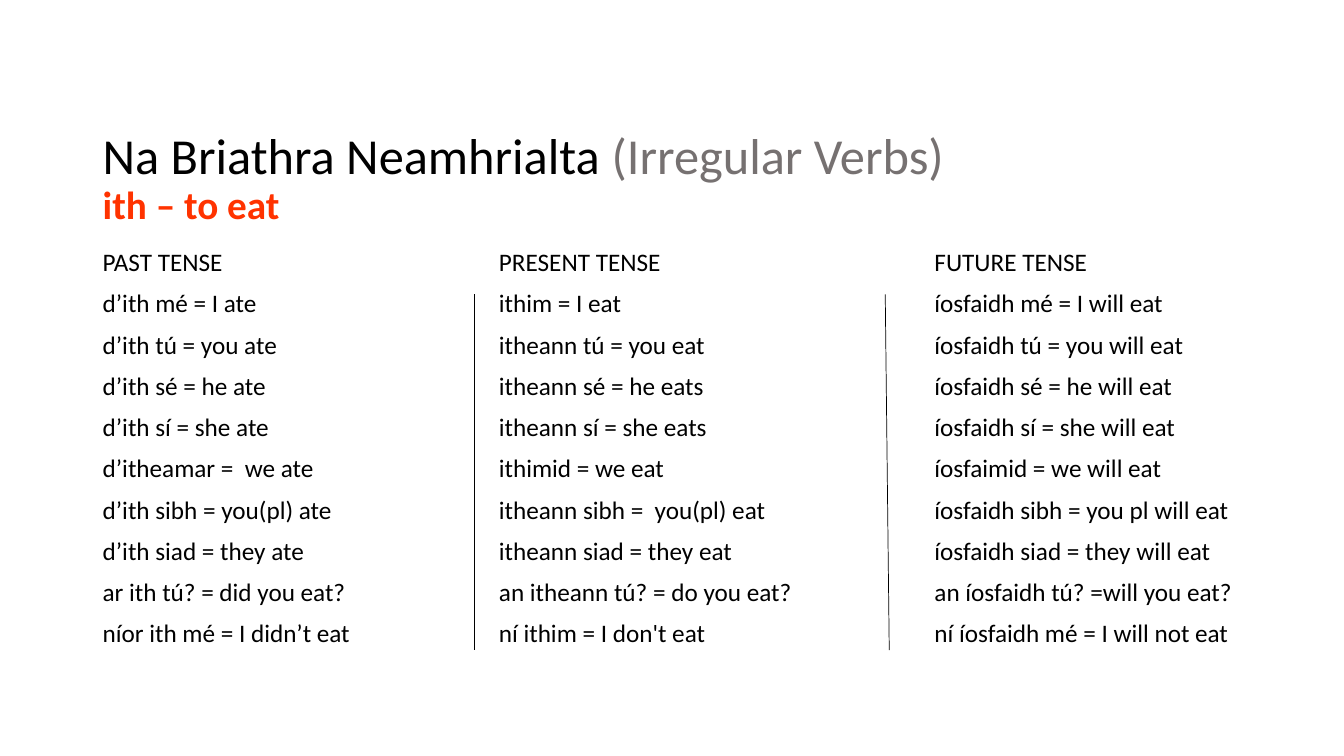
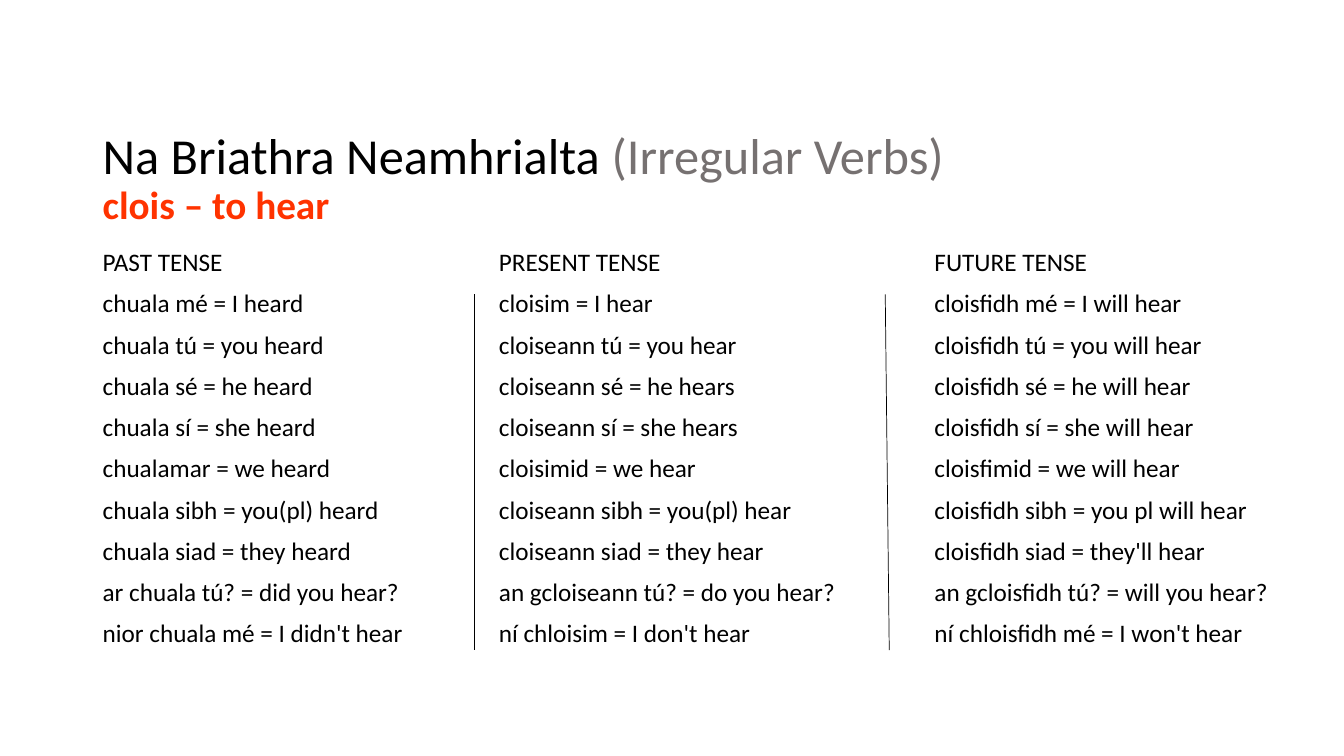
from lxml import etree
from pptx import Presentation
from pptx.dml.color import RGBColor
from pptx.enum.shapes import MSO_CONNECTOR as Conn
from pptx.enum.text import MSO_ANCHOR as Anchor
from pptx.oxml.ns import qn
from pptx.util import Inches, Pt

BLACK = RGBColor(0x00, 0x00, 0x00)
GREY = RGBColor(0x76, 0x71, 0x71)
RED = RGBColor(0xFF, 0x33, 0x00)

COLUMNS = [
    ("PAST TENSE", 0.92, 3.57),
    ("PRESENT TENSE", 4.85, 4.11),
    ("FUTURE TENSE", 9.17, 3.57),
]
DIVIDERS = [(4.7, 4.7), (8.78, 8.82)]

VERBS = {
    "ith – to eat": [
        [
            "d’ith mé = I ate",
            "d’ith tú = you ate",
            "d’ith sé = he ate",
            "d’ith sí = she ate",
            "d’itheamar =  we ate",
            "d’ith sibh = you(pl) ate",
            "d’ith siad = they ate",
            "ar ith tú? = did you eat?",
            "níor ith mé = I didn’t eat",
        ],
        [
            "ithim = I eat",
            "itheann tú = you eat",
            "itheann sé = he eats",
            "itheann sí = she eats",
            "ithimid = we eat",
            "itheann sibh =  you(pl) eat",
            "itheann siad = they eat",
            "an itheann tú? = do you eat?",
            "ní ithim = I don't eat",
        ],
        [
            "íosfaidh mé = I will eat",
            "íosfaidh tú = you will eat",
            "íosfaidh sé = he will eat",
            "íosfaidh sí = she will eat",
            "íosfaimid = we will eat",
            "íosfaidh sibh = you pl will eat",
            "íosfaidh siad = they will eat",
            "an íosfaidh tú? =will you eat?",
            "ní íosfaidh mé = I will not eat",
        ],
    ],
    "clois – to hear": [
        [
            "chuala mé = I heard",
            "chuala tú = you heard",
            "chuala sé = he heard",
            "chuala sí = she heard",
            "chualamar = we heard",
            "chuala sibh = you(pl) heard",
            "chuala siad = they heard",
            "ar chuala tú? = did you hear?",
            "nior chuala mé = I didn't hear",
        ],
        [
            "cloisim = I hear",
            "cloiseann tú = you hear",
            "cloiseann sé = he hears",
            "cloiseann sí = she hears",
            "cloisimid = we hear",
            "cloiseann sibh = you(pl) hear",
            "cloiseann siad = they hear",
            "an gcloiseann tú? = do you hear?",
            "ní chloisim = I don't hear",
        ],
        [
            "cloisfidh mé = I will hear",
            "cloisfidh tú = you will hear",
            "cloisfidh sé = he will hear",
            "cloisfidh sí = she will hear",
            "cloisfimid = we will hear",
            "cloisfidh sibh = you pl will hear",
            "cloisfidh siad = they'll hear",
            "an gcloisfidh tú? = will you hear?",
            "ní chloisfidh mé = I won't hear",
        ],
    ],
}


class Deck:
    font = "Calibri"
    line_spacing = 0.9

    def __init__(self):
        self.prs = Presentation()
        self.prs.slide_width = Inches(13.33)
        self.prs.slide_height = Inches(7.5)
        self.slide = None

    def new_slide(self):
        self.slide = self.prs.slides.add_slide(self.prs.slide_layouts[6])

    def text_frame(self, left, top, width, height):
        box = self.slide.shapes.add_textbox(
            Inches(left), Inches(top), Inches(width), Inches(height))
        tf = box.text_frame
        tf.word_wrap = True
        tf.vertical_anchor = Anchor.TOP
        return tf

    def style(self, p, size, color=BLACK, bold=False):
        p.line_spacing = self.line_spacing
        p.font.name = self.font
        p.font.size = Pt(size)
        p.font.color.rgb = color
        p.font.bold = bold

    def title(self, verb):
        tf = self.text_frame(0.92, 1.25, 12.19, 1.1)
        p = tf.paragraphs[0]
        self.style(p, 36)
        p.add_run().text = "Na Briathra Neamhrialta "
        r = p.add_run()
        r.text = "(Irregular Verbs)"
        r.font.color.rgb = GREY
        p = tf.add_paragraph()
        p.text = verb
        self.style(p, 28, RED, bold=True)

    def column(self, left, width, lines):
        tf = self.text_frame(left, 2.43, width, 4.25)
        for i, line in enumerate(lines):
            p = tf.add_paragraph() if i else tf.paragraphs[0]
            p.text = line
            self.style(p, 18)
            p.space_before = Pt(10 if i else 0)

    def divider(self, x_top, x_bottom):
        line = self.slide.shapes.add_connector(
            Conn.STRAIGHT, Inches(x_top), Inches(2.92), Inches(x_bottom), Inches(6.45))
        line.line.color.rgb = BLACK
        line.line.width = Pt(0.5)
        etree.SubElement(line._element.spPr, qn("a:effectLst"))


def main():
    deck = Deck()
    for verb, tenses in VERBS.items():
        deck.new_slide()
        deck.title(verb)
        for (heading, left, width), forms in zip(COLUMNS, tenses):
            deck.column(left, width, [heading] + forms)
        for x_top, x_bottom in DIVIDERS:
            deck.divider(x_top, x_bottom)
    deck.prs.save("out.pptx")


if __name__ == "__main__":
    main()
